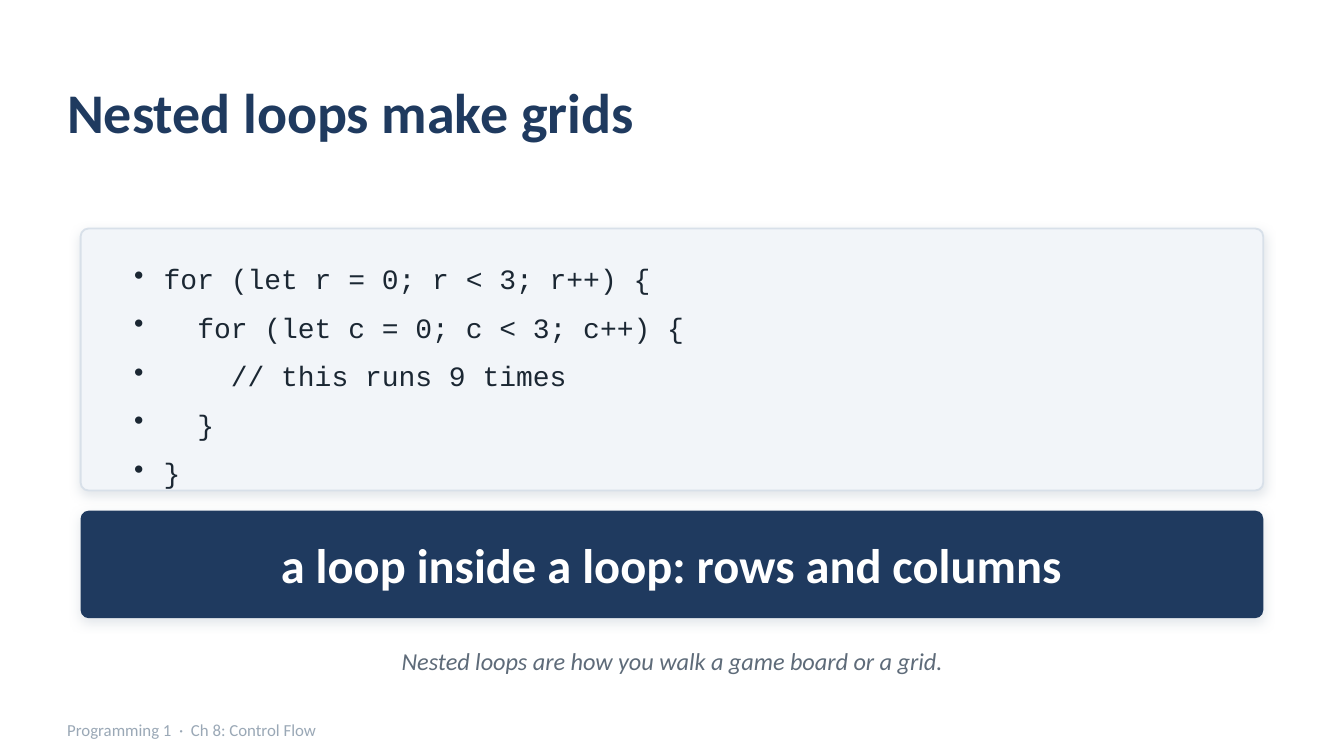
from lxml import etree
from pptx import Presentation
from pptx.dml.color import RGBColor
from pptx.enum.shapes import MSO_SHAPE
from pptx.enum.text import MSO_ANCHOR, PP_ALIGN
from pptx.oxml.ns import qn
from pptx.util import Inches, Pt

ROUNDED = MSO_SHAPE.ROUNDED_RECTANGLE
TOP, MIDDLE = MSO_ANCHOR.TOP, MSO_ANCHOR.MIDDLE
LEFT, CENTER = PP_ALIGN.LEFT, PP_ALIGN.CENTER

NAVY = "1F3A5F"
INK = "1B2733"
SLATE = "5E6B79"
MIST = "9AA8B6"
PANEL = "F2F5F9"
BORDER = "D8E0E9"
WHITE = "FFFFFF"

CARD_LEFT, CARD_WIDTH = 0.6, 8.8

NESTED_LOOP = [
    "for (let r = 0; r < 3; r++) {",
    "  for (let c = 0; c < 3; c++) {",
    "    // this runs 9 times",
    "  }",
    "}",
]


def color(value):
    return RGBColor.from_string(value)


def write(frame, lines, size, ink, font="Calibri", bold=False, italic=False,
          align=LEFT, after=0, bullet=None, indent=0.22):
    for index, line in enumerate(lines):
        paragraph = frame.paragraphs[0] if index == 0 else frame.add_paragraph()
        paragraph.alignment = align
        paragraph.space_after = Pt(after)
        if bullet:
            properties = paragraph._p.get_or_add_pPr()
            properties.set("marL", str(Inches(indent)))
            properties.set("indent", str(-Inches(indent)))
            etree.SubElement(properties, qn("a:buSzPct"), val="100000")
            etree.SubElement(properties, qn("a:buChar"), char=bullet)
        run = paragraph.add_run()
        run.text = line
        run.font.name = font
        run.font.size = Pt(size)
        run.font.bold = bold
        run.font.italic = italic
        run.font.color.rgb = color(ink)


class LessonSlide:
    corner = 0.06
    shadow_opacity = 28
    shadow_blur = 6
    shadow_distance = 2
    shadow_angle = 90

    def __init__(self, slide):
        self.slide = slide
        slide.background.fill.solid()
        slide.background.fill.fore_color.rgb = color(WHITE)

    def text(self, left, top, width, height, lines, anchor=MIDDLE,
             inset=(0, 0), **style):
        box = self.slide.shapes.add_textbox(
            Inches(left), Inches(top), Inches(width), Inches(height))
        frame = box.text_frame
        frame.word_wrap = True
        frame.vertical_anchor = anchor
        frame.margin_left = frame.margin_right = Inches(inset[0])
        frame.margin_top = frame.margin_bottom = Inches(inset[1])
        write(frame, lines, **style)

    def card(self, top, height, fill, border=None):
        card = self.slide.shapes.add_shape(
            ROUNDED, Inches(CARD_LEFT), Inches(top), Inches(CARD_WIDTH), Inches(height))
        card.adjustments[0] = self.corner / height
        card.fill.solid()
        card.fill.fore_color.rgb = color(fill)
        if border:
            card.line.color.rgb = color(border)
            card.line.width = Pt(1)
        else:
            card.line.fill.background()
        self.cast_shadow(card)

    def cast_shadow(self, card):
        card.shadow.inherit = False
        effects = card._element.spPr.find(qn("a:effectLst"))
        shadow = etree.SubElement(
            effects, qn("a:outerShdw"), blurRad=str(Pt(self.shadow_blur)),
            dist=str(Pt(self.shadow_distance)), dir=str(self.shadow_angle * 60000),
            algn="bl", rotWithShape="0")
        tint = etree.SubElement(shadow, qn("a:srgbClr"), val=MIST)
        etree.SubElement(tint, qn("a:alpha"), val=str(self.shadow_opacity * 1000))


def main():
    deck = Presentation()
    deck.slide_width = Inches(10)
    deck.slide_height = Inches(10) * 9 // 16
    lesson = LessonSlide(deck.slides.add_slide(deck.slide_layouts[6]))

    lesson.text(0.5, 0.4, 9, 0.85, ["Nested loops make grids"],
                size=30, ink=NAVY, bold=True)
    lesson.card(1.7, 1.95, PANEL, border=BORDER)
    lesson.text(0.9, 1.9, 8.2, 1.6, NESTED_LOOP, anchor=TOP, inset=(0.1, 0.05),
                size=15, ink=INK, font="Courier New", after=8, bullet="•")
    lesson.card(3.8, 0.8, NAVY)
    lesson.text(CARD_LEFT, 3.83, CARD_WIDTH, 0.74,
                ["a loop inside a loop: rows and columns"],
                size=26, ink=WHITE, bold=True, align=CENTER)
    lesson.text(CARD_LEFT, 4.72, CARD_WIDTH, 0.4,
                ["Nested loops are how you walk a game board or a grid."],
                size=13, ink=SLATE, italic=True, align=CENTER)
    lesson.text(0.5, 5.3, 8, 0.26, ["Programming 1  ·  Ch 8: Control Flow"],
                size=9, ink=MIST)

    deck.save("out.pptx")


if __name__ == "__main__":
    main()
